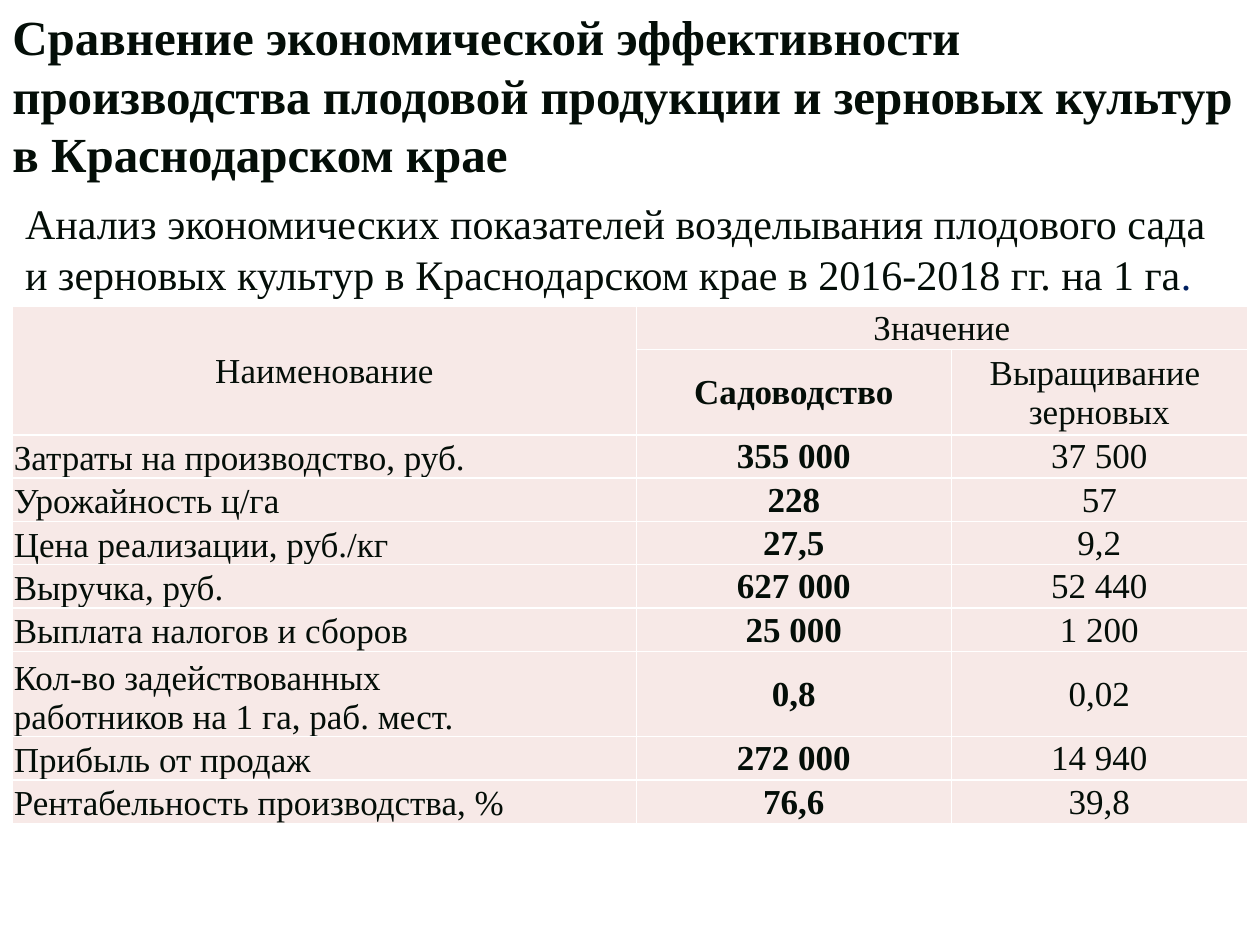
from dataclasses import dataclass

from lxml.etree import SubElement
from pptx import Presentation
from pptx.dml.color import RGBColor as Color
from pptx.enum.text import MSO_ANCHOR as Anchor, MSO_AUTO_SIZE as AutoSize, PP_ALIGN as Align
from pptx.oxml.ns import qn
from pptx.util import Inches, Pt


@dataclass(frozen=True)
class Theme:
    font: str = "Times New Roman"
    ink: str = "040E08"
    accent: str = "002060"
    cell: str = "F7E9E7"
    border: str = "FFFFFF"
    title_size: int = 28
    subtitle_size: int = 24
    table_size: int = 20


THEME = Theme()
TITLE = ("Сравнение экономической эффективности производства плодовой продукции "
         "и зерновых культур в Краснодарском крае")
SUBTITLE = ("Анализ экономических показателей возделывания плодового сада "
            "и зерновых культур в Краснодарском крае в 2016-2018 гг. на 1 га")
COLUMN_WIDTHS = (4.95, 2.5, 2.35)
LINE_HEIGHT = 0.21
TABLE_HEIGHT = 4.1
HEADERS = (
    ("Наименование", "Значение", ""),
    ("", "Садоводство", "Выращивание \vзерновых"),
)
INDICATORS = (
    ("Затраты на производство, руб.", "355 000", "37 500"),
    ("Урожайность ц/га", "228", "57"),
    ("Цена реализации, руб./кг", "27,5", "9,2"),
    ("Выручка, руб.", "627 000", "52 440"),
    ("Выплата налогов и сборов", "25 000", "1 200"),
    ("Кол-во задействованных \vработников на 1 га, раб. мест.", "0,8", "0,02"),
    ("Прибыль от продаж", "272 000", "14 940"),
    ("Рентабельность производства, %", "76,6", "39,8"),
)


def style_font(font, size, bold=False):
    font.name = THEME.font
    font.size = Pt(size)
    font.bold = bold
    font.color.rgb = Color.from_string(THEME.ink)


def add_text(slide, box, text, size, bold=False):
    frame = slide.shapes.add_textbox(*map(Inches, box)).text_frame
    frame.word_wrap = True
    frame.auto_size = AutoSize.SHAPE_TO_FIT_TEXT
    paragraph = frame.paragraphs[0]
    paragraph.add_run().text = text
    style_font(paragraph.font, size, bold)
    return paragraph


def add_borders(cell):
    properties = cell._tc.get_or_add_tcPr()
    for index, side in enumerate(("lnL", "lnR", "lnT", "lnB")):
        line = properties.makeelement(qn(f"a:{side}"), {"w": str(Pt(1))})
        fill = SubElement(line, qn("a:solidFill"))
        SubElement(fill, qn("a:srgbClr"), val=THEME.border)
        properties.insert(index, line)


def fill_cell(cell, text, align, anchor, bold):
    cell.margin_left = cell.margin_right = cell.margin_top = Inches(0.01)
    cell.margin_bottom = 0
    cell.vertical_anchor = anchor
    cell.fill.solid()
    cell.fill.fore_color.rgb = Color.from_string(THEME.cell)
    add_borders(cell)
    paragraph = cell.text_frame.paragraphs[0]
    paragraph.text = text
    paragraph.alignment = align
    style_font(paragraph.font, THEME.table_size, bold)


def add_indicator_table(slide, left, top):
    rows = HEADERS + INDICATORS
    shape = slide.shapes.add_table(
        len(rows), len(COLUMN_WIDTHS), Inches(left), Inches(top),
        Inches(sum(COLUMN_WIDTHS)), Inches(TABLE_HEIGHT))
    table = shape.table
    for column, width in zip(table.columns, COLUMN_WIDTHS):
        column.width = Inches(width)
    for row_index, texts in enumerate(rows):
        lines = 1 + max(text.count("\v") for text in texts)
        table.rows[row_index].height = Inches(LINE_HEIGHT * lines)
        for column_index, text in enumerate(texts):
            is_label = column_index == 0 and row_index >= len(HEADERS)
            fill_cell(
                table.cell(row_index, column_index), text,
                Align.LEFT if is_label else Align.CENTER,
                Anchor.BOTTOM if is_label else Anchor.MIDDLE,
                bold=column_index == 1 and row_index > 0)
    table.cell(0, 0).merge(table.cell(1, 0))
    table.cell(0, 1).merge(table.cell(0, 2))
    shape.height = Inches(TABLE_HEIGHT)


def main():
    presentation = Presentation()
    presentation.slide_width, presentation.slide_height = Inches(10), Inches(7.5)
    slide = presentation.slides.add_slide(presentation.slide_layouts[6])
    add_text(slide, (0, 0, 10, 1.51), TITLE, THEME.title_size, bold=True)
    subtitle = add_text(slide, (0.1, 1.52, 9.71, 0.91), SUBTITLE, THEME.subtitle_size)
    period = subtitle.add_run()
    period.text = "."
    period.font.color.rgb = Color.from_string(THEME.accent)
    add_indicator_table(slide, 0.1, 2.43)
    presentation.save("out.pptx")


if __name__ == "__main__":
    main()
